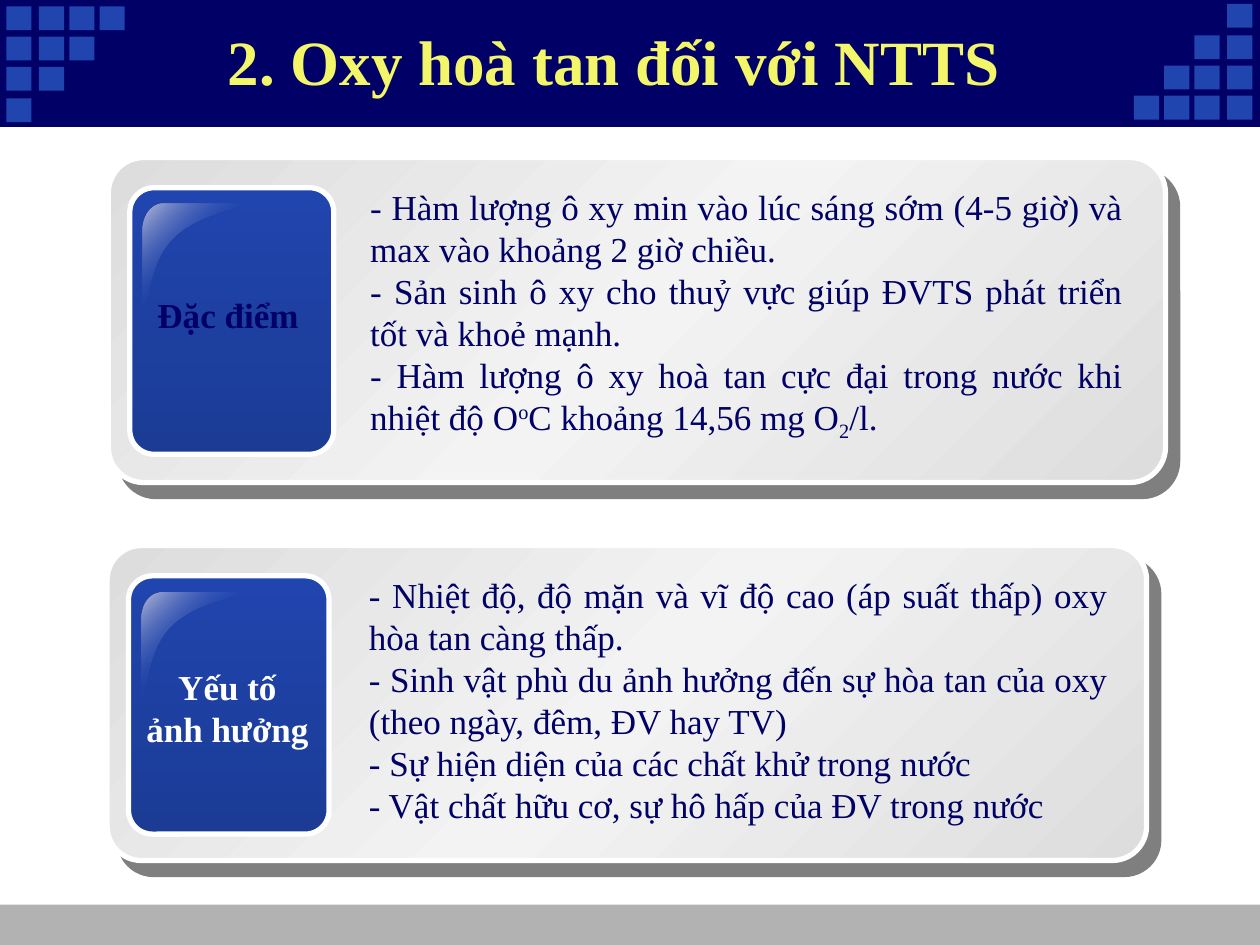
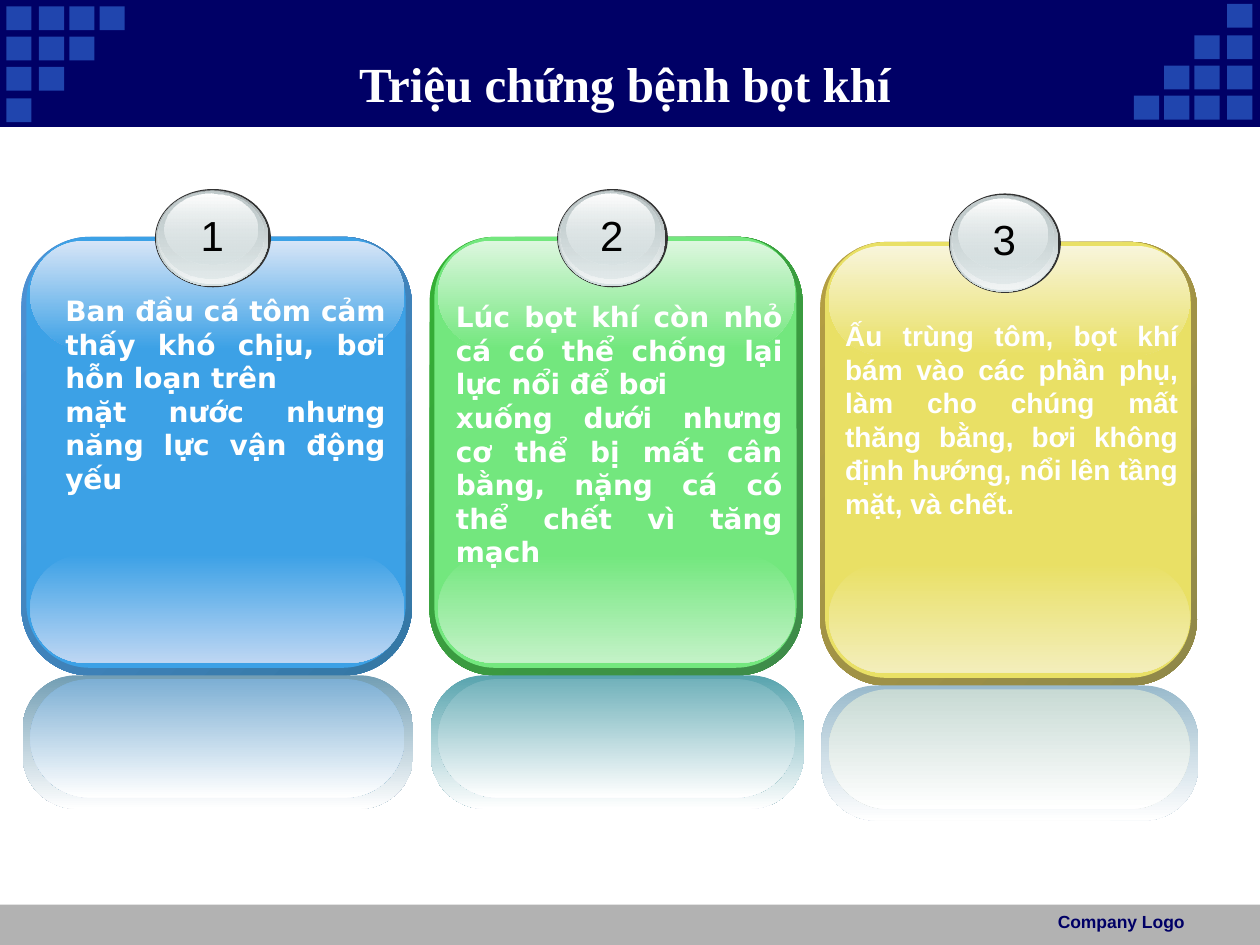
import pptx
import pptx.dml.color
import pptx.enum.shapes
import pptx.enum.text
import pptx.oxml
import pptx.oxml.ns
import pptx.util

Inches = pptx.util.Inches
Pt = pptx.util.Pt
SHAPE = pptx.enum.shapes.MSO_SHAPE
ALIGN = pptx.enum.text.PP_ALIGN

SERIF = "Times New Roman"
SANS = "Arial"
WIDE_SANS = "DejaVu Sans"

COLOURS = {
    "navy": "000066", "blue": "2045AE", "deep blue": "1B3B95",
    "gloss": "B6BAD8", "footer": "B2B2B2", "white": "FFFFFF",
    "black": "000000", "title yellow": "F3F668",
    "panel edge": "DDDDDD", "panel middle": "F3F3F3",
    "rim": "333333", "steel": "99A1A2", "silver": "D6E1E2",
    "pale silver": "F2F5F5", "grey silver": "C1CBCC",
}

CARD_COLOURS = {
    "blue": {"frame": ("4E91D4", "3477A4"), "face": "3CA1E6", "top": "D7E5F7",
             "bottom": "BDD6F3", "mirror": "729EB4", "inner mirror": "7DAFD4"},
    "green": {"frame": ("34B034", "3F8B4A"), "face": "73E77E", "top": "DDF7DF",
              "bottom": "C3F2C7", "mirror": "58A4AE", "inner mirror": "72B2BB"},
    "yellow": {"frame": ("B59F43", "8F8849"), "face": "E9E065", "top": "F8F5DB",
               "bottom": "F3EEBB", "mirror": "99BACC", "inner mirror": "C8DAD4"},
}

NAMESPACE = pptx.oxml.ns.nsdecls("a")
CARD_SIZE = (3.1, 3.48)  # the size the card layers below are measured on


def rgb(hex_string):
    return pptx.dml.color.RGBColor.from_string(hex_string)


def set_gradient(shape, stops, angle):
    """Fill with stops of (position %, hex colour, optional opacity %)."""
    stop_xml = ""
    for position, colour, *opacity in stops:
        alpha = f'<a:alpha val="{opacity[0] * 1000}"/>' if opacity else ""
        stop_xml += (f'<a:gs pos="{position * 1000}"><a:srgbClr val="{colour}">'
                     f'{alpha}</a:srgbClr></a:gs>')
    shape.fill.gradient()
    properties = shape.element.spPr
    properties.replace(
        properties.find(pptx.oxml.ns.qn("a:gradFill")),
        pptx.oxml.parse_xml(
            f'<a:gradFill {NAMESPACE} rotWithShape="1"><a:gsLst>{stop_xml}</a:gsLst>'
            f'<a:lin ang="{angle * 60000}" scaled="0"/></a:gradFill>'))


def paint(shape, fill, angle=90, line=None, line_width=3):
    """Fill with a hex colour or gradient stops, and drop the theme effects."""
    shape.shadow.inherit = False
    if isinstance(fill, str):
        shape.fill.solid()
        shape.fill.fore_color.rgb = rgb(fill)
    else:
        set_gradient(shape, fill, angle)
    if line:
        shape.line.color.rgb = rgb(line)
        shape.line.width = Pt(line_width)
    else:
        shape.line.fill.background()


def add_block(slide, kind, box, fill, adjustment=None, **style):
    shape = slide.shapes.add_shape(kind, *map(Inches, box))
    if adjustment is not None:
        shape.adjustments[0] = adjustment
    paint(shape, fill, **style)
    return shape


def add_text(slide, box, paragraphs, size, font, colour, bold=False,
             align=ALIGN.JUSTIFY, wrap=True):
    """Each paragraph is a string or a list of (text, baseline shift %) runs."""
    text_frame = slide.shapes.add_textbox(*map(Inches, box)).text_frame
    text_frame.word_wrap = wrap
    for index, content in enumerate(paragraphs):
        paragraph = text_frame.paragraphs[0] if index == 0 else text_frame.add_paragraph()
        paragraph.alignment = align
        format_font(paragraph.font, size, font, colour, bold)
        for text, shift in [(content, 0)] if isinstance(content, str) else content:
            run = paragraph.add_run()
            run.text = text
            if shift:
                run._r.get_or_add_rPr().set("baseline", str(shift * 1000))


def format_font(font, size, name, colour, bold):
    font.size = Pt(size)
    font.name = name
    font.bold = bold
    font.color.rgb = rgb(colour)


def add_layout_decoration(layout, slide):
    """Draw bands and corner squares on the slide, then move them to its layout."""
    parts = [
        add_block(slide, SHAPE.RECTANGLE, (0, 7.18, 10, 0.33), COLOURS["footer"]),
        add_block(slide, SHAPE.RECTANGLE, (0, 0, 10, 1), COLOURS["navy"],
                  line=COLOURS["navy"], line_width=0.75),
    ]
    width, height = 0.2, 0.19
    columns = (0.05, 0.31, 0.55, 0.79)
    for row, top in enumerate((0.05, 0.29, 0.53, 0.78)):
        for left in columns[:len(columns) - row]:
            opposite = (9.99 - left - width, 1 - top - height)
            for corner in ((left, top), opposite):
                parts.append(add_block(slide, SHAPE.RECTANGLE,
                                       (*corner, width, height), COLOURS["blue"]))
    first_placeholder = layout.placeholders[0].element
    for number, part in enumerate(parts, start=100):
        part.element.nvSpPr.cNvPr.set("id", str(number))
        first_placeholder.addprevious(part.element)


def set_title(slide, text, box, size, colour):
    title = slide.shapes.title
    title.left, title.top, title.width, title.height = map(Inches, box)
    text_frame = title.text_frame
    text_frame.text = text
    text_frame.auto_size = pptx.enum.text.MSO_AUTO_SIZE.NONE
    text_frame.vertical_anchor = pptx.enum.text.MSO_ANCHOR.MIDDLE
    paragraph = text_frame.paragraphs[0]
    paragraph.alignment = ALIGN.CENTER
    format_font(paragraph.font, size, SERIF, colour, True)


def curve_points(start, control_1, control_2, end, steps=12):
    """Points along a cubic curve, without its start."""
    points = []
    for step in range(1, steps + 1):
        t = step / steps
        weights = ((1 - t) ** 3, 3 * t * (1 - t) ** 2, 3 * t ** 2 * (1 - t), t ** 3)
        points.append(tuple(
            sum(weight * value for weight, value in zip(weights, values))
            for values in zip(start, control_1, control_2, end)))
    return points


def add_gloss(slide, box):
    left, top, width, height = box
    outline = [
        *curve_points((0.2, 0), (0.09, 0), (0, 0.09), (0, 0.2)),
        *curve_points((0, 0.98), (0.04, 1), (0.01, 0.52), (0.27, 0.29)),
        *curve_points((0.27, 0.29), (0.52, 0.07), (0.99, 0.05), (0.98, 0)),
    ]
    outline.insert(12, (0, 0.98))
    points = [(Inches(left + x * width), Inches(top + y * height)) for x, y in outline]
    builder = slide.shapes.build_freeform(Inches(left + 0.2 * width), Inches(top))
    builder.add_line_segments(points, close=True)
    paint(builder.convert_to_shape(),
          [(0, COLOURS["gloss"]), (50, COLOURS["blue"], 0), (100, COLOURS["gloss"])],
          angle=45)


def add_panel(slide, box, label, label_box, label_colour, points, text_width):
    """Grey panel with a blue badge; label_box is measured from the panel corner."""
    left, top, width, height = box
    edge, middle = COLOURS["panel edge"], COLOURS["panel middle"]
    panel = add_block(slide, SHAPE.ROUNDED_RECTANGLE, box,
                      [(0, edge), (50, middle), (100, edge)], 0.109,
                      angle=45, line=COLOURS["white"])
    panel.element.spPr.find(pptx.oxml.ns.qn("a:effectLst")).append(pptx.oxml.parse_xml(
        f'<a:outerShdw {NAMESPACE} dist="{Pt(10.6)}" dir="{49 * 60000}" algn="ctr" '
        f'rotWithShape="0"><a:srgbClr val="{COLOURS["black"]}">'
        '<a:alpha val="50000"/></a:srgbClr></a:outerShdw>'))
    badge = (left + 0.17, top + 0.24, width * 0.193, height * 0.82)
    add_block(slide, SHAPE.ROUNDED_RECTANGLE, badge,
              [(0, COLOURS["blue"]), (100, COLOURS["deep blue"])], 0.119,
              line=COLOURS["white"])
    add_gloss(slide, (badge[0] + 0.1, badge[1] + 0.13, badge[2] / 2, badge[3] / 2))
    x, y, label_width, label_height = label_box
    add_text(slide, (left + x, top + y, label_width, label_height), label, 20, SERIF,
             label_colour, bold=True, align=ALIGN.CENTER, wrap=False)
    add_text(slide, (left + 1.98, top + 0.17, text_width, 2.1), points, 20, SERIF,
             COLOURS["navy"])


def add_card(slide, box, number, colours, text_box, paragraphs, font):
    """Glossy card with a numbered ball; text_box is measured from the card corner."""
    left, top, width, height = box
    scale_x, scale_y = width / CARD_SIZE[0], height / CARD_SIZE[1]

    def place(x, y, part_width, part_height):
        return (left + x * scale_x, top + y * scale_y,
                part_width * scale_x, part_height * scale_y)

    face, white, silver = colours["face"], COLOURS["white"], COLOURS["silver"]
    frame_start, frame_end = colours["frame"]
    layers = [
        ((0, 0, 3.1, 3.48), 0.175, [(0, frame_start), (100, frame_end)], 45),
        ((0.04, 0, 3.01, 3.42), 0.167, face, 90),
        ((0.07, 2.52, 2.97, 0.86), 0.5, [(0, face), (100, colours["bottom"])], 90),
        ((0.07, 0.03, 2.97, 0.86), 0.5, [(0, colours["top"]), (100, face)], 90),
        ((0.01, 3.48, 3.1, 1.06), 0.404, [(0, colours["mirror"]), (100, white)], 90),
        ((0.07, 3.51, 2.97, 0.94), 0.5, [(0, colours["inner mirror"]), (100, white)], 90),
    ]
    for layer, rounding, fill, angle in layers:
        add_block(slide, SHAPE.ROUNDED_RECTANGLE, place(*layer), fill, rounding, angle=angle)

    ball_layers = [
        ((1.06, -0.38, 0.92, 0.78), COLOURS["rim"]),
        ((1.07, -0.37, 0.89, 0.76), [(0, COLOURS["steel"]), (100, silver)]),
        ((1.08, -0.37, 0.87, 0.74), [(0, silver, 0), (100, COLOURS["pale silver"])]),
        ((1.09, -0.36, 0.83, 0.69), [(0, COLOURS["grey silver"]), (100, silver, 48)]),
        ((1.14, -0.34, 0.73, 0.56), [(0, white), (100, silver, 38)]),
    ]
    for layer, fill in ball_layers:
        add_block(slide, SHAPE.OVAL, place(*layer), fill)
    add_text(slide, place(1.26, -0.27, 0.51, 0.56), [str(number)], 24, SANS,
             COLOURS["black"], align=ALIGN.CENTER, wrap=False)
    x, y, text_width, text_height = text_box
    add_text(slide, (left + x, top + y, text_width, text_height), paragraphs, 16, font,
             white, bold=True)


def fill_oxygen_slide(slide):
    set_title(slide, "2. Oxy hoà tan đối với NTTS", (0.83, 0.17, 8.08, 0.62), 36,
              COLOURS["title yellow"])
    add_panel(slide, (0.86, 1.25, 8.39, 2.58), ["Đặc điểm"], (0.29, 1.03, 1.32, 0.43),
              COLOURS["navy"], [
                  "- Hàm lượng ô xy min vào lúc sáng sớm (4-5 giờ) và max vào khoảng 2 giờ chiều.",
                  "- Sản sinh ô xy cho thuỷ vực giúp ĐVTS phát triển tốt và khoẻ mạnh.",
                  [("- Hàm lượng ô xy hoà tan cực đại trong nước khi nhiệt độ O", 0),
                   ("o", 30), ("C khoảng 14,56 mg O", 0), ("2", -25), ("/l.", 0)],
              ], 6.17)
    add_panel(slide, (0.85, 4.33, 8.25, 2.5), ["Yếu tố", "ảnh hưởng"],
              (0.21, 0.9, 1.49, 0.77), COLOURS["white"], [
                  "- Nhiệt độ, độ mặn và vĩ độ cao (áp suất thấp) oxy hòa tan càng thấp.",
                  "- Sinh vật phù du ảnh hưởng đến sự hòa tan của oxy (theo ngày, đêm, ĐV hay TV)",
                  "- Sự hiện diện của các chất khử trong nước",
                  "- Vật chất hữu cơ, sự hô hấp của ĐV trong nước",
              ], 6.06)


def fill_symptoms_slide(slide):
    set_title(slide, "Triệu chứng bệnh bọt khí", (0.92, 0.35, 8.08, 0.62), 28,
              COLOURS["white"])
    add_text(slide, (7.83, 7.18, 1.67, 0.32), ["Company Logo"], 10, SANS,
             COLOURS["navy"], bold=True, align=ALIGN.RIGHT)
    cards = [
        ((0.17, 1.88, 3.1, 3.48), "blue", (0.25, 0.4, 2.74, 1.72), WIDE_SANS,
         ["Ban đầu cá tôm cảm thấy khó chịu, bơi hỗn loạn trên",
          "mặt nước nhưng năng lực vận động yếu"]),
        ((3.41, 1.88, 2.96, 3.48), "green", (0.11, 0.45, 2.79, 2.26), WIDE_SANS,
         ["Lúc bọt khí còn nhỏ cá có thể chống lại lực nổi để bơi",
          "xuống dưới nhưng cơ thể bị mất cân bằng, nặng cá có thể chết vì tăng mạch"]),
        ((6.51, 1.92, 2.99, 3.52), "yellow", (0.1, 0.56, 2.84, 1.72), SANS,
         ["Ấu trùng tôm, bọt khí bám vào các phần phụ, làm cho chúng mất thăng bằng, "
          "bơi không định hướng, nổi lên tầng mặt, và chết."]),
    ]
    for number, (box, colour, text_box, font, paragraphs) in enumerate(cards, start=1):
        add_card(slide, box, number, CARD_COLOURS[colour], text_box, paragraphs, font)


def main():
    presentation = pptx.Presentation()
    presentation.slide_width, presentation.slide_height = Inches(10), Inches(7.5)
    layout = presentation.slide_layouts.get_by_name("Title Only")
    oxygen_slide = presentation.slides.add_slide(layout)
    add_layout_decoration(layout, oxygen_slide)
    fill_oxygen_slide(oxygen_slide)
    fill_symptoms_slide(presentation.slides.add_slide(layout))
    presentation.save("out.pptx")


if __name__ == "__main__":
    main()
